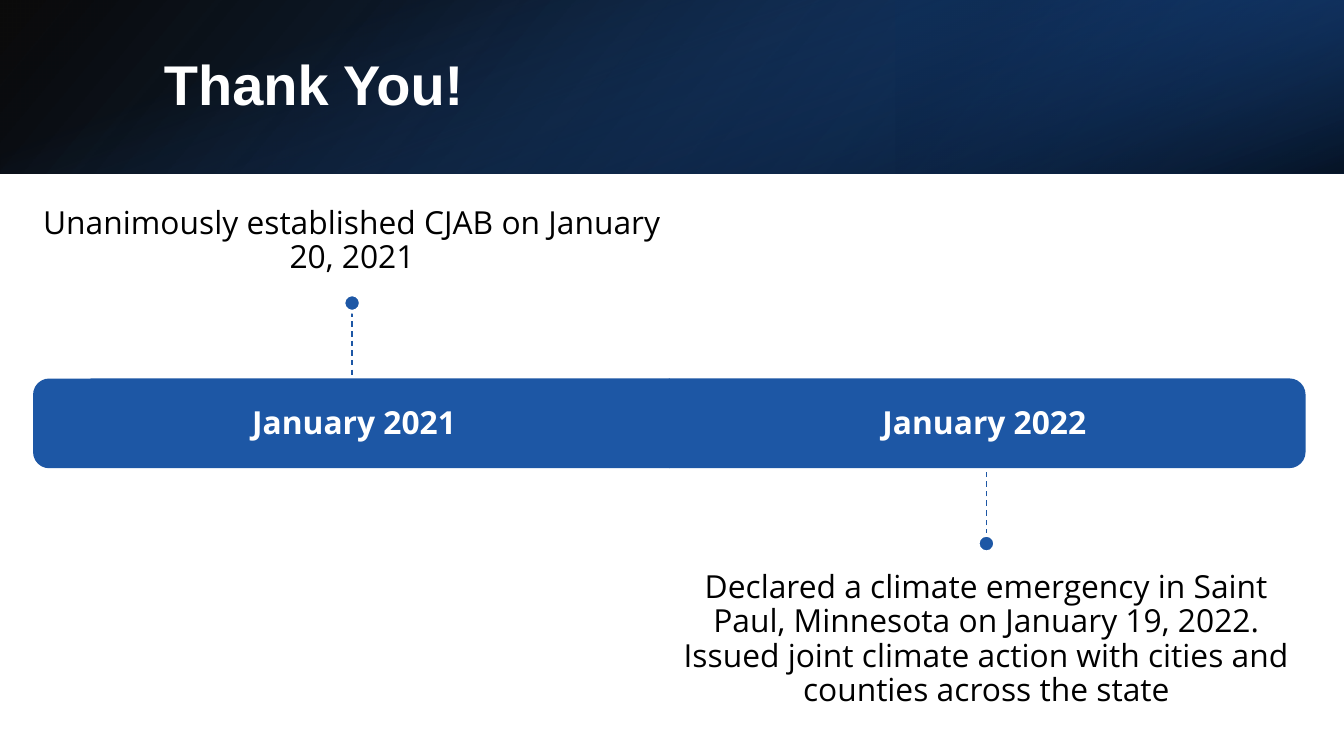
from lxml import etree
from pptx import Presentation
from pptx.dml.color import RGBColor
from pptx.enum.dml import MSO_LINE
from pptx.enum.shapes import MSO_CONNECTOR, MSO_SHAPE
from pptx.enum.text import MSO_ANCHOR, MSO_AUTO_SIZE, PP_ALIGN
from pptx.oxml.ns import qn
from pptx.util import Inches, Pt

RECT, OVAL = MSO_SHAPE.RECTANGLE, MSO_SHAPE.OVAL
ROUND = MSO_SHAPE.ROUND_2_SAME_RECTANGLE
STRAIGHT, DASH = MSO_CONNECTOR.STRAIGHT, MSO_LINE.DASH
TOP, MIDDLE, BOTTOM = MSO_ANCHOR.TOP, MSO_ANCHOR.MIDDLE, MSO_ANCHOR.BOTTOM
CENTER, LEFT = PP_ALIGN.CENTER, PP_ALIGN.LEFT
FIXED = MSO_AUTO_SIZE.NONE
BLUE, BLACK, WHITE = "1D57A5", "000000", "FFFFFF"


def color(code):
    return RGBColor.from_string(code)


def inches(*box):
    return [Inches(n) for n in box]


def write(shape, text, size, font, tint, bold, align, anchor):
    frame = shape.text_frame
    frame.text = text
    frame.word_wrap = True
    frame.auto_size = FIXED
    frame.vertical_anchor = anchor
    para = frame.paragraphs[0]
    para.alignment = align
    para.line_spacing = 0.9
    face = para.runs[0].font
    face.size, face.name, face.bold = Pt(size), font, bold
    face.color.rgb = color(tint)


def label(group, box, text, tint, bold, anchor, pads):
    shape = group.shapes.add_textbox(*inches(*box))
    frame = shape.text_frame
    frame.margin_left, frame.margin_top, frame.margin_right, frame.margin_bottom = inches(*pads)
    write(shape, text, 17, "Open Sans", tint, bold, CENTER, anchor)


def solid(group, kind, box, edge):
    shape = group.shapes.add_shape(kind, *inches(*box))
    shape.shadow.inherit = False
    shape.fill.solid()
    shape.fill.fore_color.rgb = color(BLUE)
    shape.line.color.rgb = color(edge)
    shape.line.width = Pt(2)
    return shape


def shade(slide, box, stops, angle, turn=0, flip=False):
    shape = slide.shapes.add_shape(RECT, *inches(*box))
    shape.shadow.inherit = False
    shape.line.fill.background()
    shape.rotation = turn
    props = shape.element.spPr
    if flip:
        props.find(qn("a:xfrm")).set("flipH", "1")
    grad = etree.Element(qn("a:gradFill"), rotWithShape="1")
    items = etree.SubElement(grad, qn("a:gsLst"))
    for pos, code, alpha in stops:
        stop = etree.SubElement(items, qn("a:gs"), pos=str(pos * 1000))
        tint = etree.SubElement(stop, qn("a:srgbClr"), val=code)
        etree.SubElement(tint, qn("a:alpha"), val=str(alpha * 1000))
    etree.SubElement(grad, qn("a:lin"), ang=str(angle * 60000), scaled="0")
    props.find(qn("a:prstGeom")).addnext(grad)


def banner(slide, left, top, width, height, text):
    shade(slide, (left, top, width, height),
          [(0, BLACK, 96), (100, "16417C", 100)], 140, flip=True)
    third = width / 3
    shade(slide, (left + width - third, top, third, height),
          [(19, "0F2B52", 68), (100, BLUE, 79)], 320, 180, True)
    shift = (width - height) / 2
    shade(slide, (left + shift, top - shift, height, width),
          [(23, BLUE, 0), (99, BLACK, 74)], 340, 90)
    title = slide.shapes.title
    title.left, title.top, title.width, title.height = inches(left + 1.12, top + 0.29, 8.24, 0.72)
    write(title, text, 30, "Arial", WHITE, True, LEFT, MIDDLE)
    slide.shapes.element.append(title.element)


def event(group, left, top, width, height, date, note, above):
    mid = left + width / 2
    shift = (width - height) / 2
    bar = solid(group, ROUND, (left + shift, top - shift, height, width), BLUE)
    bar.rotation = 270 if above else 90
    inset = 0.03 if above else 0
    label(group, (left + inset, top + 0.04, width - 0.03, 0.57), date,
          WHITE, True, MIDDLE, [0.14] * 4)

    reach, dot, tall = 0.51, 0.13, 2.22
    if above:
        start, end = top, top - reach
        spot = end - dot
        place, anchor, pads = spot - tall, BOTTOM, (0, 0, 0, 0.14)
    else:
        start, end = top + height, top + height + reach
        spot = end
        place, anchor, pads = spot + dot, TOP, (0, 0.14, 0, 0)
    label(group, (left, place, width, tall), note, BLACK, False, anchor, pads)
    stem = group.shapes.add_connector(STRAIGHT, *inches(mid, end, mid, start))
    stem.line.color.rgb = color(BLUE)
    stem.line.width = Pt(0.75)
    stem.line.dash_style = DASH
    etree.SubElement(stem.element.spPr, qn("a:effectLst"))
    solid(group, OVAL, (mid - dot / 2, spot, dot, dot), WHITE)


def timeline(slide, left, top, width, height, events):
    group = slide.shapes.add_group_shape()
    step = width / len(events)
    for i, (date, note) in enumerate(events):
        event(group, left + i * step, top, step, height, date, note, i % 2 == 0)


def main():
    deck = Presentation()
    deck.slide_width, deck.slide_height = inches(10, 10 * 9 / 16)
    slide = deck.slides.add_slide(deck.slide_layouts[5])
    banner(slide, 0, 0, 10, 1.29, "Thank You!")
    timeline(slide, 0.26, 2.83, 9.44, 0.64, [
        ("January 2021", "Unanimously established CJAB on January 20, 2021"),
        ("January 2022", "Declared a climate emergency in Saint Paul, Minnesota on "
         "January 19, 2022. Issued joint climate action with cities and counties "
         "across the state"),
    ])
    deck.save("out.pptx")


if __name__ == "__main__":
    main()
